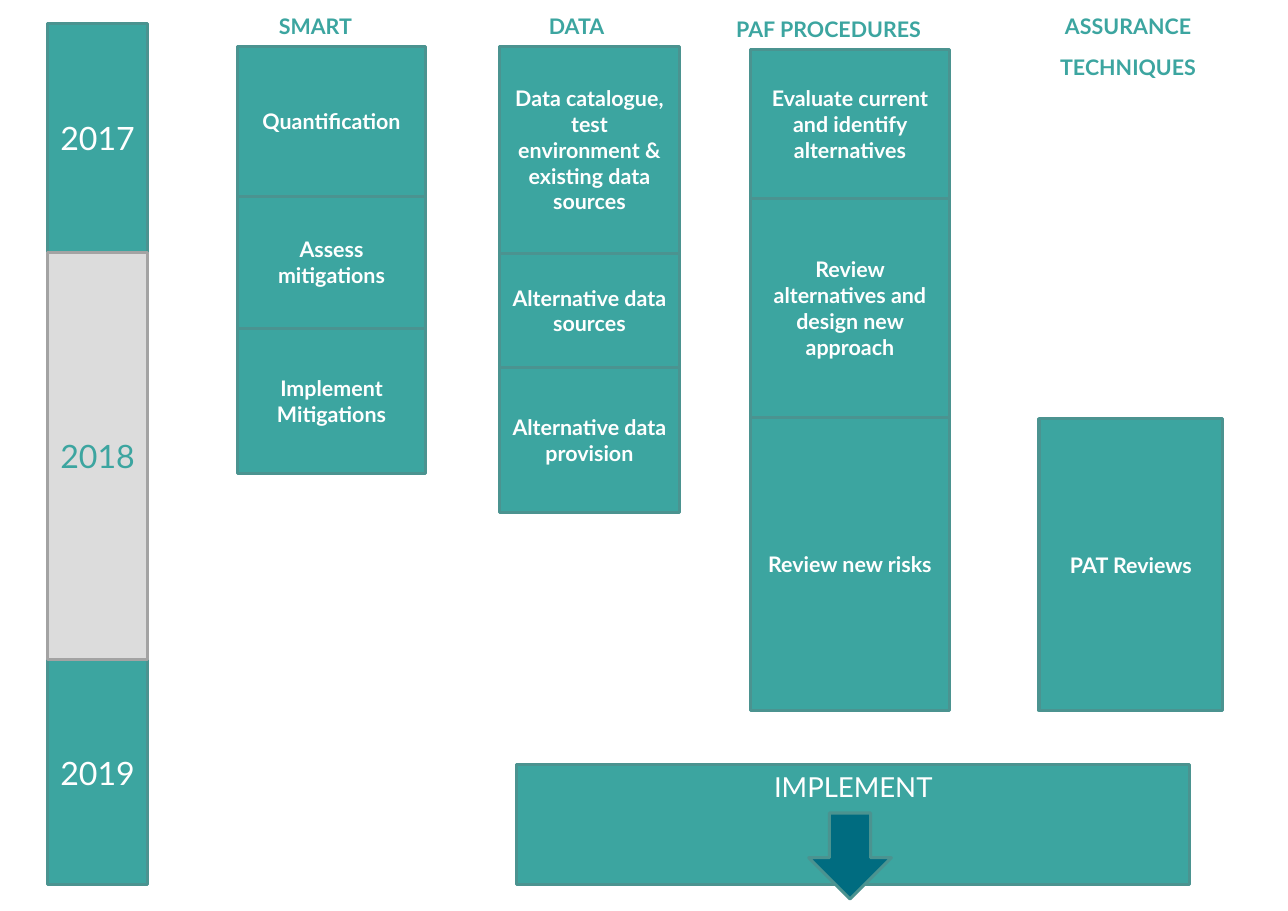
from dataclasses import dataclass
from itertools import pairwise

from pptx import Presentation
from pptx.dml.color import RGBColor
from pptx.enum.shapes import MSO_SHAPE
from pptx.enum.text import MSO_ANCHOR, PP_ALIGN
from pptx.shapes.autoshape import Shape
from pptx.slide import Slide
from pptx.text.text import _Paragraph
from pptx.util import Pt

RECT, ARROW = MSO_SHAPE.RECTANGLE, MSO_SHAPE.DOWN_ARROW
TOP, MIDDLE = MSO_ANCHOR.TOP, MSO_ANCHOR.MIDDLE
LEFT, CENTER = PP_ALIGN.LEFT, PP_ALIGN.CENTER

FONT = "Lato"
COLORS = {
    "teal": "3CA5A0",
    "edge": "4B9390",
    "grey": "DCDCDC",
    "rim": "A3A3A3",
    "white": "FFFFFF",
    "navy": "006C80",
}


@dataclass(frozen=True)
class Box:
    left: float
    top: float
    width: float
    height: float


@dataclass(frozen=True)
class Style:
    fill: str = "teal"
    line: str = "edge"
    ink: str = "white"
    size: float = 14
    bold: bool = True
    anchor: MSO_ANCHOR = MIDDLE


@dataclass(frozen=True)
class Stream:
    """A column of touching boxes; edges has one more entry than steps."""
    left: float
    width: float
    edges: tuple[float, ...]
    steps: tuple[str, ...]


@dataclass(frozen=True)
class Heading:
    box: Box
    lines: tuple[str, ...]
    align: PP_ALIGN = LEFT


YEAR = Style(size=21, bold=False)
GREY = Style("grey", "rim", "teal", 21, False)
BANNER = Style(size=18, bold=False, anchor=TOP)
POINTER = Style(fill="navy")

YEARS = Stream(31, 65.5, (15.1, 165, 431.3, 578.2), ("2017", "2018", "2019"))
STREAMS = (
    Stream(155.5, 122.4, (30.2, 128.2, 214.6, 309.6),
           ("Quantification", "Assess mitigations", "Implement Mitigations")),
    Stream(326.2, 118, (30.2, 165.6, 240, 334.8),
           ("Data catalogue, test environment & existing data sources",
            "Alternative data sources", "Alternative data provision")),
    Stream(490.3, 130.3, (32.4, 129.6, 272.9, 464.4),
           ("Evaluate current and identify alternatives",
            "Review alternatives and design new approach",
            "Review new risks")),
    Stream(679, 120.2, (273.6, 464.4), ("PAT Reviews",)),
)
HEADINGS = (
    Heading(Box(182.2, 4.3, 53.3, 20.9), ("SMART",)),
    Heading(Box(358.6, 4.3, 43.9, 20.9), ("DATA",)),
    Heading(Box(481, 6.5, 128.2, 18.7), ("PAF PROCEDURES",)),
    Heading(Box(684.7, 4.3, 105.1, 46.1), ("ASSURANCE", "TECHNIQUES"), CENTER),
)


def color(name: str) -> RGBColor:
    return RGBColor.from_string(COLORS[name])


def place(box: Box) -> tuple[Pt, Pt, Pt, Pt]:
    return Pt(box.left), Pt(box.top), Pt(box.width), Pt(box.height)


def write(par: _Paragraph, text: str, size: float, bold: bool, ink: str) -> None:
    par.text = text
    par.font.name = FONT
    par.font.size = Pt(size)
    par.font.bold = bold
    par.font.color.rgb = color(ink)


def draw_box(slide: Slide, box: Box, style: Style, text: str = "",
             kind: MSO_SHAPE = RECT) -> Shape:
    shape = slide.shapes.add_shape(kind, *place(box))
    shape.shadow.inherit = False
    shape.fill.solid()
    shape.fill.fore_color.rgb = color(style.fill)
    shape.line.color.rgb = color(style.line)
    shape.line.width = Pt(2)
    if text:
        frame = shape.text_frame
        frame.word_wrap = True
        frame.vertical_anchor = style.anchor
        par = frame.paragraphs[0]
        par.alignment = CENTER
        write(par, text, style.size, style.bold, style.ink)
    return shape


def cells(stream: Stream) -> list[tuple[Box, str]]:
    """Pair each step with the box between its two edges."""
    return [(Box(stream.left, top, stream.width, end - top), step)
            for (top, end), step in zip(pairwise(stream.edges), stream.steps)]


def draw_heading(slide: Slide, heading: Heading) -> None:
    frame = slide.shapes.add_textbox(*place(heading.box)).text_frame
    frame.word_wrap = True
    frame.margin_left = frame.margin_right = Pt(0)
    frame.margin_top = frame.margin_bottom = Pt(0)
    for i, line in enumerate(heading.lines):
        par = frame.add_paragraph() if i else frame.paragraphs[0]
        par.alignment = heading.align
        par.line_spacing = Pt(21)
        par.space_after = Pt(5.6)
        write(par, line, 14, True, "teal")


def main() -> None:
    deck = Presentation()
    deck.slide_width, deck.slide_height = Pt(841.68), Pt(595.44)
    slide = deck.slides.add_slide(deck.slide_layouts[6])

    first, middle, last = cells(YEARS)
    for (box, year), style in ((first, YEAR), (last, YEAR), (middle, GREY)):
        draw_box(slide, box, style, year)
    for stream in STREAMS:
        for box, step in cells(stream):
            draw_box(slide, box, Style(), step)
    for heading in HEADINGS:
        draw_heading(slide, heading)
    draw_box(slide, Box(337.7, 499.7, 439.9, 78.5), BANNER, "IMPLEMENT")
    draw_box(slide, Box(528.5, 531.4, 54, 56.2), POINTER, kind=ARROW)

    deck.save("out.pptx")


if __name__ == "__main__":
    main()
